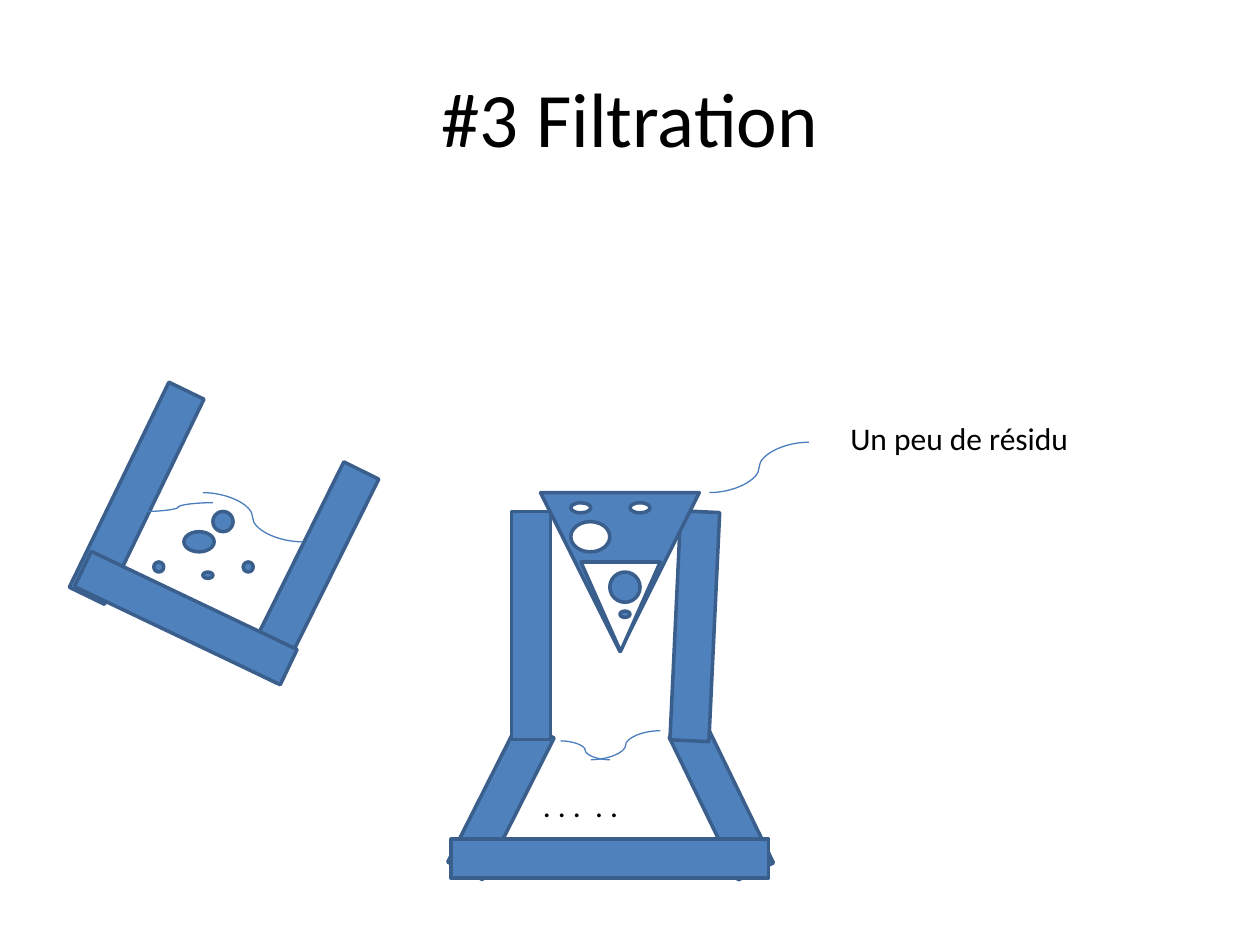
from dataclasses import dataclass

import pptx
import pptx.dml.color
import pptx.enum.shapes
import pptx.enum.text
import pptx.oxml
import pptx.shapes.shapetree
import pptx.text.text
import pptx.util

Inches = pptx.util.Inches
Kind = pptx.enum.shapes.MSO_SHAPE
Align = pptx.enum.text.PP_ALIGN
Tree = pptx.shapes.shapetree.SlideShapes

BLUE, EDGE, CURVE = "4F81BD", "3A5F8C", "4B7EBC"
WHITE, BLACK = "FFFFFF", "000000"


@dataclass
class Part:
    left: float
    top: float
    width: float
    height: float
    turn: float = 0
    kind: Kind = Kind.RECTANGLE
    fill: str = BLUE


@dataclass
class Curve:
    x1: float
    y1: float
    x2: float
    y2: float


def color(code: str) -> pptx.dml.color.RGBColor:
    return pptx.dml.color.RGBColor.from_string(code)


def wall(left: float, top: float, height: float, turn: float = 0) -> Part:
    return Part(left, top, 0.31, height, turn)


def drop(left: float, top: float, width: float, height: float,
         fill: str = BLUE) -> Part:
    return Part(left, top, width, height, 0, Kind.FLOWCHART_CONNECTOR, fill)


def cone(left: float, top: float, width: float, height: float,
         fill: str = BLUE) -> Part:
    return Part(left, top, width, height, 180, Kind.ISOSCELES_TRIANGLE, fill)


def draw_part(tree: Tree, part: Part) -> None:
    shape = tree.add_shape(part.kind, Inches(part.left), Inches(part.top),
                           Inches(part.width), Inches(part.height))
    shape.rotation = part.turn
    shape.shadow.inherit = False
    shape.fill.solid()
    shape.fill.fore_color.rgb = color(part.fill)
    shape.line.color.rgb = color(EDGE)
    shape.line.width = pptx.util.Pt(2)


def draw_curve(tree: Tree, curve: Curve) -> None:
    line = tree.add_connector(pptx.enum.shapes.MSO_CONNECTOR.CURVE,
                              Inches(curve.x1), Inches(curve.y1),
                              Inches(curve.x2), Inches(curve.y2))
    line.line.color.rgb = color(CURVE)
    line.line.width = pptx.util.Pt(0.75)
    props = line._element.spPr
    props.append(pptx.oxml.parse_xml(
        '<a:effectLst xmlns:a='
        '"http://schemas.openxmlformats.org/drawingml/2006/main"/>'))


def write(frame: pptx.text.text.TextFrame, text: str, *, size: float = 18,
          align: Align = Align.LEFT, ink: str = BLACK) -> None:
    frame.word_wrap = True
    frame.text = text
    line = frame.paragraphs[0]
    line.alignment = align
    line.font.size = pptx.util.Pt(size)
    line.font.name = "Calibri"
    line.font.color.rgb = color(ink)


def label(tree: Tree, text: str, left: float, top: float,
          width: float) -> None:
    box = tree.add_textbox(Inches(left), Inches(top), Inches(width),
                           Inches(0.4))
    write(box.text_frame, text)


BEAKER = [
    wall(0.93, 3.01, 1.81, 25.9),
    wall(2.31, 3.64, 1.81, 26.4),
    wall(1.32, 4, 1.81, 295.5),
]
GRAINS = [
    drop(1.46, 4.22, 0.24, 0.16),
    drop(1.93, 4.46, 0.08, 0.08),
    drop(1.61, 4.54, 0.08, 0.05),
    drop(1.22, 4.46, 0.08, 0.08),
    drop(1.69, 4.06, 0.16, 0.16),
]
FLASK = [
    wall(3.82, 5.72, 1.26, 26.8),
    wall(5.57, 5.72, 1.26, 334.1),
    Part(3.58, 6.66, 2.52, 0.31),
    wall(4.06, 4.06, 1.81),
    wall(5.36, 4.06, 1.82, 2.7),
]
FILTER = [
    cone(4.29, 3.91, 1.26, 1.26),
    cone(4.61, 4.46, 0.63, 0.71, WHITE),
    drop(4.84, 4.54, 0.24, 0.24),
    drop(4.92, 4.85, 0.08, 0.05),
    drop(4.53, 3.99, 0.16, 0.08, WHITE),
    drop(4.53, 4.14, 0.31, 0.24, WHITE),
    drop(5, 3.99, 0.16, 0.08, WHITE),
]
WAVES = [
    Curve(1.14, 4.06, 1.69, 3.99),
    Curve(1.61, 3.91, 2.4, 4.3),
    Curve(4.45, 5.88, 4.84, 6.03),
    Curve(4.69, 6.03, 5.24, 5.8),
]
LEADER = Curve(6.42, 3.51, 5.63, 3.91)


def main() -> None:
    deck = pptx.Presentation()
    deck.slide_width, deck.slide_height = Inches(10), Inches(7.5)
    tree = deck.slides.add_slide(deck.slide_layouts[5]).shapes

    title = tree.title
    title.left, title.top = Inches(0.5), Inches(0.3)
    title.width, title.height = Inches(9), Inches(1.25)
    title.text_frame.vertical_anchor = pptx.enum.text.MSO_ANCHOR.MIDDLE
    write(title.text_frame, "#3 Filtration", size=44, align=Align.CENTER)

    for part in BEAKER + GRAINS + FLASK + FILTER:
        draw_part(tree, part)
    for curve in [*WAVES, LEADER]:
        draw_curve(tree, curve)

    label(tree, "Un peu de résidu", 6.65, 3.28, 2.68)
    label(tree, ". . .  . .", 4.21, 6.19, 1.34)
    deck.save("out.pptx")


if __name__ == "__main__":
    main()
